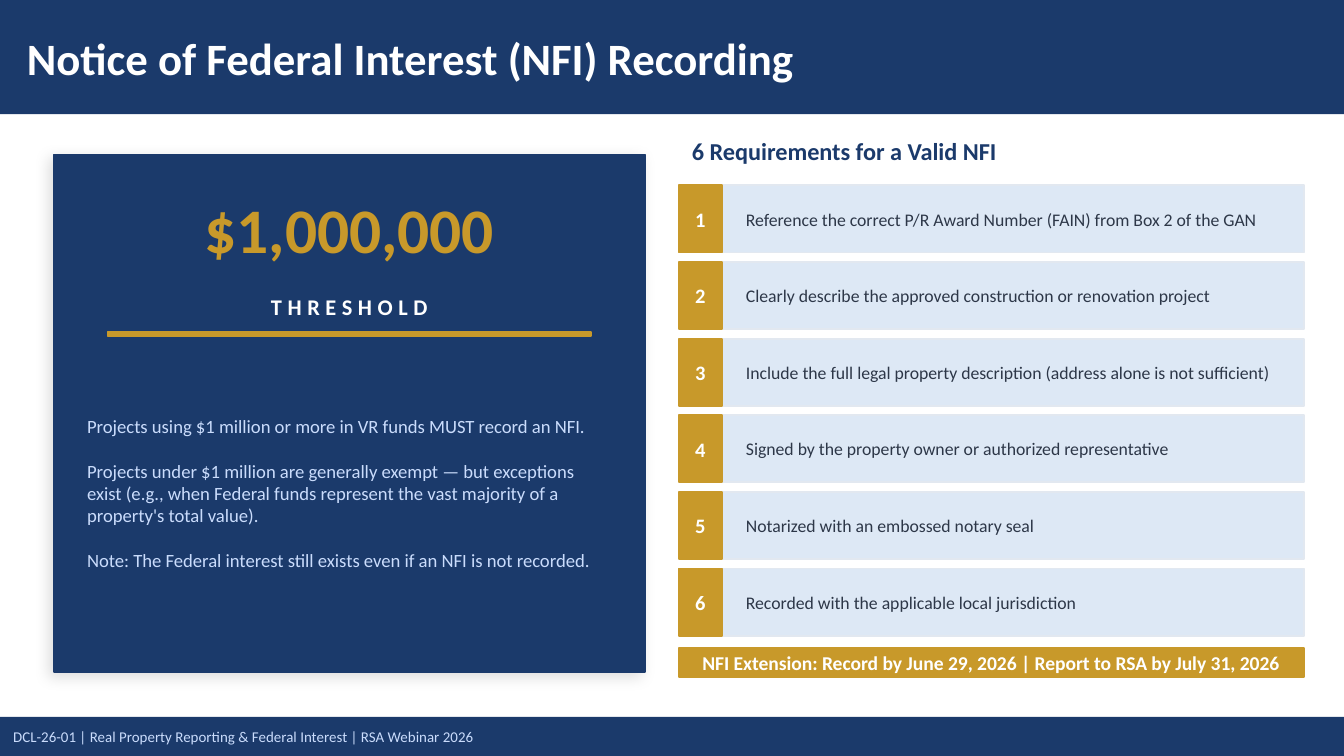
from lxml import etree
from pptx import Presentation
from pptx.dml.color import RGBColor
from pptx.enum.shapes import MSO_SHAPE
from pptx.enum.text import MSO_ANCHOR, PP_ALIGN
from pptx.oxml.ns import qn
from pptx.util import Pt

RECTANGLE = MSO_SHAPE.RECTANGLE
MIDDLE = MSO_ANCHOR.MIDDLE
LEFT, CENTER = PP_ALIGN.LEFT, PP_ALIGN.CENTER

NAVY = RGBColor(0x1B, 0x3A, 0x6B)
GOLD = RGBColor(0xC8, 0x99, 0x2A)
ICE = RGBColor(0xCA, 0xDC, 0xFC)
PALE = RGBColor(0xDD, 0xE8, 0xF5)
EDGE = RGBColor(0xE2, 0xE8, 0xF0)
INK = RGBColor(0x2D, 0x37, 0x48)
WHITE = RGBColor(0xFF, 0xFF, 0xFF)

TITLE = "Notice of Federal Interest (NFI) Recording"
FOOTER = "DCL-26-01 | Real Property Reporting & Federal Interest | RSA Webinar 2026"
THRESHOLD_NOTES = [
    "Projects using $1 million or more in VR funds MUST record an NFI.",
    "Projects under $1 million are generally exempt — but exceptions exist "
    "(e.g., when Federal funds represent the vast majority of a property's total value).",
    "Note: The Federal interest still exists even if an NFI is not recorded.",
]
REQUIREMENTS = [
    "Reference the correct P/R Award Number (FAIN) from Box 2 of the GAN",
    "Clearly describe the approved construction or renovation project",
    "Include the full legal property description (address alone is not sufficient)",
    "Signed by the property owner or authorized representative",
    "Notarized with an embossed notary seal",
    "Recorded with the applicable local jurisdiction",
]
DEADLINE = "NFI Extension: Record by June 29, 2026 | Report to RSA by July 31, 2026"


def write(shape, lines, size, color, bold=False, align=LEFT, gap=0, tracking=0,
          margin_left=7.2, margin_right=7.2):
    """Fill a shape with one paragraph per line; lengths are in points."""
    frame = shape.text_frame
    frame.word_wrap = True
    frame.vertical_anchor = MIDDLE
    margins = {"margin_left": margin_left, "margin_right": margin_right,
               "margin_top": 3.6, "margin_bottom": 3.6}
    for name, value in margins.items():
        setattr(frame, name, Pt(value))
    font_format = {"name": "Calibri", "size": Pt(size), "bold": bold}
    for index, line in enumerate(lines):
        para = frame.add_paragraph() if index else frame.paragraphs[0]
        para.alignment = align
        if index and gap:
            para.space_before = Pt(gap)
        span = para.add_run()
        span.text = line
        for name, value in font_format.items():
            setattr(span.font, name, value)
        span.font.color.rgb = color
        if tracking:
            span.font._element.set("spc", str(tracking * 100))


def add_block(page, left, top, width, height, fill, line=None):
    block = page.shapes.add_shape(RECTANGLE, Pt(left), Pt(top), Pt(width), Pt(height))
    block.shadow.inherit = False
    block.fill.solid()
    block.fill.fore_color.rgb = fill
    if line is None:
        block.line.fill.background()
    else:
        block.line.color.rgb = line
        block.line.width = Pt(1)
    return block


def add_text(page, left, top, width, height, lines, **text_format):
    box = page.shapes.add_textbox(Pt(left), Pt(top), Pt(width), Pt(height))
    write(box, lines, **text_format)


def add_soft_shadow(shape):
    effects = shape._element.spPr.find(qn("a:effectLst"))
    shadow = etree.SubElement(effects, qn("a:outerShdw"), blurRad=str(Pt(8)),
                              dist=str(Pt(3)), dir="8100000", algn="bl",
                              rotWithShape="0")
    color = etree.SubElement(shadow, qn("a:srgbClr"), val="000000")
    etree.SubElement(color, qn("a:alpha"), val="13000")


def place_title(page, left, top, width, height):
    title = page.shapes.title
    for name, value in {"left": left, "top": top, "width": width, "height": height}.items():
        setattr(title, name, Pt(value))
    title.fill.solid()
    title.fill.fore_color.rgb = NAVY
    write(title, [TITLE], size=24, color=WHITE, bold=True, margin_left=14.4)


def place_footer(page, left, top, width, height):
    footer = add_block(page, left, top, width, height, NAVY)
    write(footer, [FOOTER], size=8, color=ICE)


def place_threshold_panel(page, left, top, width, height):
    panel = add_block(page, left, top, width, height, NAVY, NAVY)
    add_soft_shadow(panel)
    add_block(page, left + 28.8, top + 95, width - 57.6, 2.2, GOLD, GOLD)
    add_text(page, left, top + 7.2, width, 64.8, ["$1,000,000"],
             size=34, color=GOLD, bold=True, align=CENTER)
    add_text(page, left, top + 70.6, width, 21.6, ["THRESHOLD"],
             size=12, color=WHITE, bold=True, align=CENTER, tracking=3)
    add_text(page, left + 10.8, top + 102.2, width - 21.6, 158.4, THRESHOLD_NOTES,
             size=10, color=ICE, gap=12)


def place_requirements(page, left, top, width, height):
    row_height, row_pitch, badge_width, banner_height = 36, 41.04, 23.04, 15.84
    first_row = top + 30.96
    add_text(page, left, top, width, 25.2, ["6 Requirements for a Valid NFI"],
             size=13, color=NAVY, bold=True)
    for index, requirement in enumerate(REQUIREMENTS):
        row_top = first_row + index * row_pitch
        row = add_block(page, left, row_top, width, row_height, PALE, EDGE)
        write(row, [requirement], size=9.5, color=INK, margin_left=36, margin_right=14.4)
        badge = add_block(page, left, row_top, badge_width, row_height, GOLD, GOLD)
        write(badge, [str(index + 1)], size=11, color=WHITE, bold=True, align=CENTER)
    banner = add_block(page, left, top + height - banner_height, width, banner_height,
                       GOLD, GOLD)
    write(banner, [DEADLINE], size=10.5, color=WHITE, bold=True, align=CENTER)


def main():
    deck = Presentation()
    deck.slide_width, deck.slide_height = Pt(720), Pt(405)
    page = deck.slides.add_slide(deck.slide_layouts.get_by_name("Title Only"))
    place_title(page, 0, 0, 720, 61.2)
    place_threshold_panel(page, 28.8, 82.8, 316.8, 277.2)
    place_requirements(page, 363.6, 68.4, 334.8, 294.48)
    place_footer(page, 0, 384, 720, 21)
    deck.save("out.pptx")


if __name__ == "__main__":
    main()
